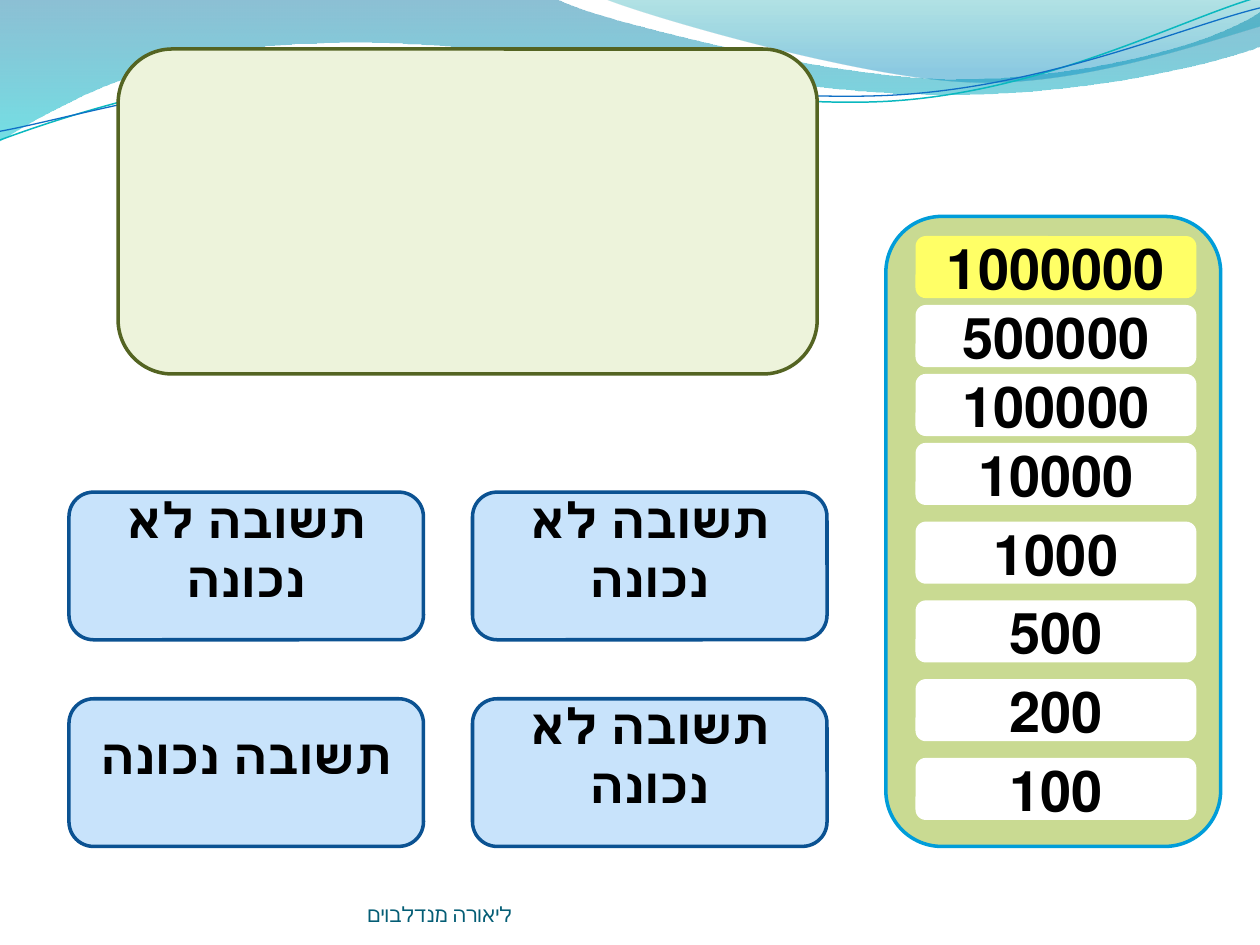
from lxml import etree
from pptx import Presentation
from pptx.dml.color import RGBColor
from pptx.enum.shapes import MSO_SHAPE
from pptx.enum.text import MSO_ANCHOR, PP_ALIGN
from pptx.oxml import parse_xml
from pptx.oxml.ns import nsdecls, qn
from pptx.util import Pt

ROUND = MSO_SHAPE.ROUNDED_RECTANGLE
ALTERNATE = MSO_SHAPE.FLOWCHART_ALTERNATE_PROCESS
CENTER, LEFT = PP_ALIGN.CENTER, PP_ALIGN.LEFT
MIDDLE, BOTTOM = MSO_ANCHOR.MIDDLE, MSO_ANCHOR.BOTTOM
FONT = "Cambria"

WRONG, RIGHT = "תשובה לא נכונה", "תשובה נכונה"
ANSWERS = [[WRONG, WRONG], [RIGHT, WRONG]]
PRIZES = ["1000000", "500000", "100000", "10000", "1000", "500", "200", "100"]

# Each path is a start point followed by lines (2 numbers) and curves (6 numbers).
BACK_WAVE = [(0, -1), (317, -1), (343, 12, 478, 45, 546, 45),
             (614, 45, 690, 27, 720, 6.5), (720.7, 26),
             (708, 32, 626, 55, 537, 54), (448, 54, 275, 20, 185, 24.5),
             (93, 25, 33, 60, -1, 81)]
FRONT_WAVE = [(345, -1), (366, 8, 491, 45, 554, 47),
              (616, 50, 692, 23, 720, 15), (720, 0)]
TEAL_LINE = [(0, 80), (35, 67, 114, 41, 199, 37.5),
             (284, 34, 427, 64, 513, 57.5), (600, 51, 675, 11, 718.5, -1.5)]
BLUE_LINE = [(0, 75), (34, 69, 118, 44, 204, 40.5),
             (290, 37, 430, 60, 516, 54), (602, 48, 677, 15, 720, 4.5)]


def rgb(value):
    return RGBColor.from_string(value)


def set_line(sp, color=None, width=2):
    if color:
        sp.line.color.rgb = rgb(color)
        sp.line.width = Pt(width)
    else:
        sp.line.fill.background()


def add_text(sp, text, size=32, color="000000", bold=True, align=CENTER,
             anchor=MIDDLE, insets=(7.2, 3.6, 7.2, 3.6)):
    """Write one right-to-left paragraph; insets are left, top, right, bottom."""
    tf = sp.text_frame
    tf.word_wrap = True
    tf.vertical_anchor = anchor
    tf.margin_left, tf.margin_top, tf.margin_right, tf.margin_bottom = map(Pt, insets)
    p = tf.paragraphs[0]
    p.alignment = align
    p._p.get_or_add_pPr().set("rtl", "1")
    r = p.add_run()
    r.text = text
    r.font.size = Pt(size)
    r.font.bold = bold
    r.font.color.rgb = rgb(color)
    r.font.name = FONT


def add_box(s, box, fill, line=None, kind=ROUND):
    sp = s.shapes.add_shape(kind, *map(Pt, box))
    sp.shadow.inherit = False
    sp.fill.solid()
    sp.fill.fore_color.rgb = rgb(fill)
    set_line(sp, line)
    return sp


def add_path(s, path, origin, close):
    """Build the outline through all points, then join each curve's three into one."""
    left, top = origin
    points = [(Pt(left + seg[i]), Pt(top + seg[i + 1]))
              for seg in path for i in range(0, len(seg), 2)]
    builder = s.shapes.build_freeform(*points[0])
    builder.add_line_segments(points[1:], close=close)
    sp = builder.convert_to_shape()
    sp.shadow.inherit = False
    lines = iter(list(sp._element.iter(qn("a:lnTo"))))
    for seg in path[1:]:
        first = next(lines)
        if len(seg) == 6:
            curve = etree.Element(qn("a:cubicBezTo"))
            first.addprevious(curve)
            for line in (first, next(lines), next(lines)):
                curve.append(line[0])
                line.getparent().remove(line)
    return sp


def add_wave(s, path, origin, stops):
    """Fill a closed path from top to bottom; stops are percent, colour, opacity."""
    sp = add_path(s, path, origin, True)
    set_line(sp)
    gs = "".join(f'<a:gs pos="{pos * 1000}"><a:srgbClr val="{color}">'
                 f'<a:alpha val="{alpha * 1000}"/></a:srgbClr></a:gs>'
                 for pos, color, alpha in stops)
    sp._element.spPr.find(qn("a:custGeom")).addnext(parse_xml(
        f'<a:gradFill {nsdecls("a")} rotWithShape="1"><a:gsLst>{gs}</a:gsLst>'
        '<a:lin ang="5400000" scaled="0"/></a:gradFill>'))


def add_header(s, origin):
    add_wave(s, BACK_WAVE, origin, [(0, "0074A1", 45), (100, "00C6CF", 55)])
    add_wave(s, FRONT_WAVE, origin, [(0, "00A1A9", 30), (80, "008BBF", 45)])
    for path, color, width in ((TEAL_LINE, "0AB8BF", 0.85),
                               (BLUE_LINE, "0F6FC6", 0.75)):
        sp = add_path(s, path, origin, False)
        sp.fill.background()
        set_line(sp, color, width)


def add_answers(s, box):
    left, top, width, height = box
    w, h = 202.6, 84.4
    for row, answers in enumerate(ANSWERS):
        for col, answer in enumerate(answers):
            sp = add_box(s, (left + col * (width - w), top + row * (height - h), w, h),
                         "C8E3FB", "0B5292")
            add_text(sp, answer, size=28, insets=(7.2, 3.6, 7.2, 24))


def add_prizes(s, box):
    """Draw the ladder; the four top prizes stand closer together than the rest."""
    left, top, width, height = box
    add_box(s, box, "C9DA92", "009DD9")
    y = top + 11.2
    for i, prize in enumerate(PRIZES):
        sp = add_box(s, (left + 17, y, 160.5, 35.5), "FFFFFF" if i else "FFFF66")
        add_text(sp, prize)
        y += 39.4 if i < 3 else 45


def add_footer(s, box):
    sp = s.shapes.add_textbox(*map(Pt, box))
    add_text(sp, "ליאורה מנדלבוים", size=12, color="045D75", bold=False,
             align=LEFT, anchor=BOTTOM, insets=(0, 0, 0, 0))


def main():
    prs = Presentation()
    prs.slide_width, prs.slide_height = Pt(720), Pt(540)
    s = prs.slides.add_slide(prs.slide_layouts[6])
    add_header(s, (0, 0))
    add_box(s, (67.5, 28, 399.5, 185.7), "EDF3DB", "546422", ALTERNATE)
    add_answers(s, (39.4, 281.2, 433.2, 202.5))
    add_prizes(s, (506.2, 123.7, 191.3, 360))
    add_footer(s, (210, 500.5, 264, 28.8))
    prs.save("out.pptx")


if __name__ == "__main__":
    main()
